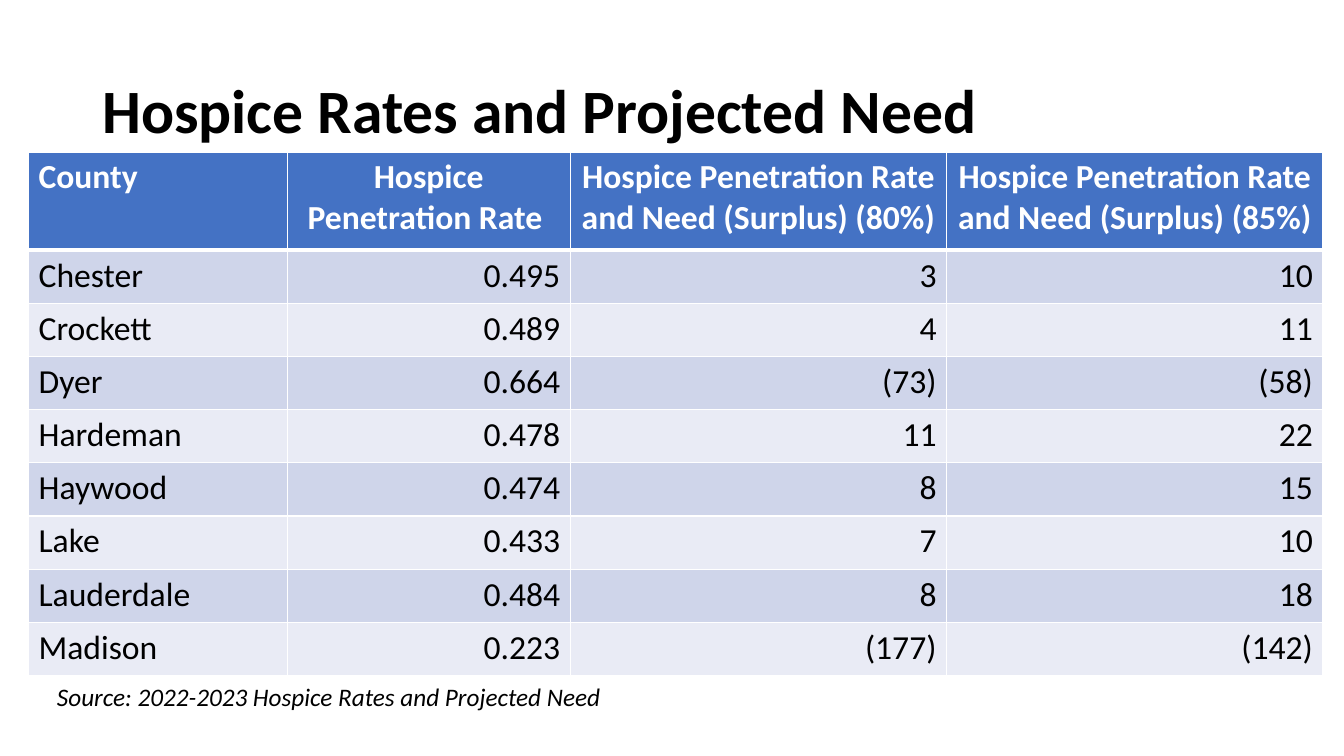
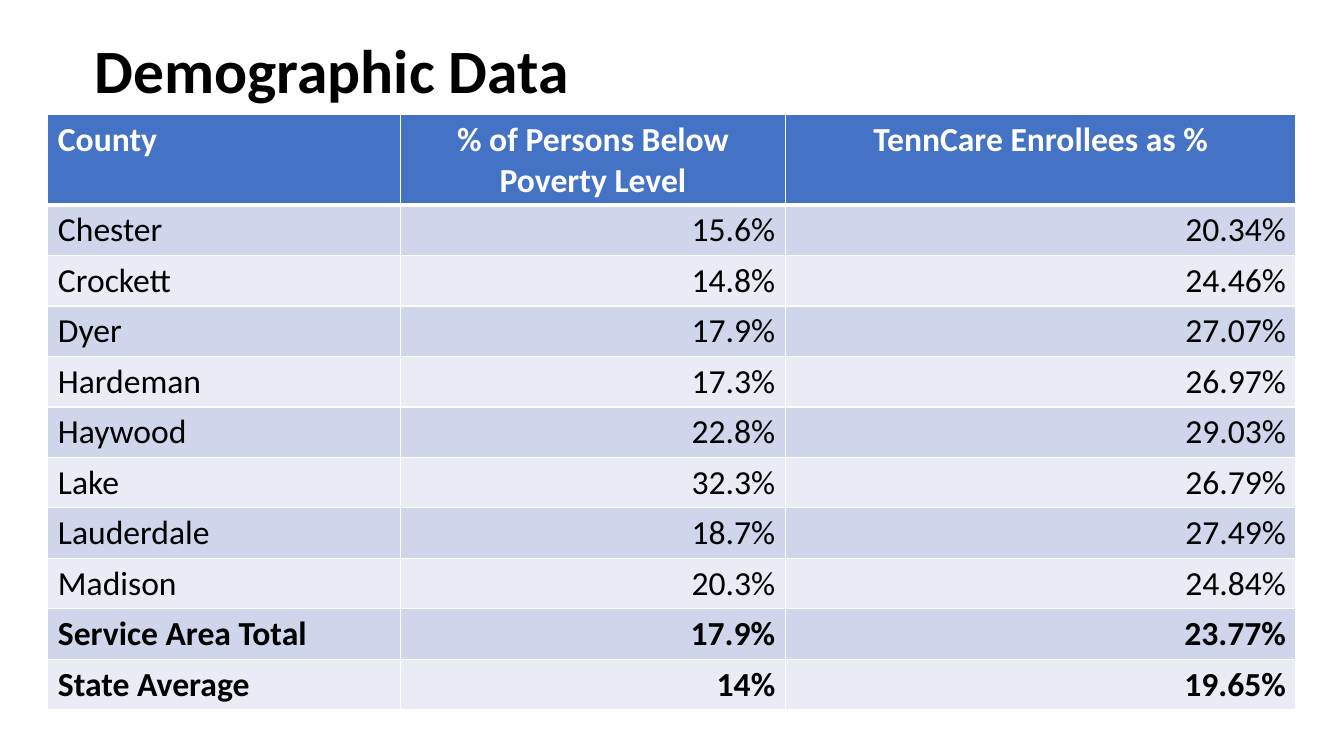
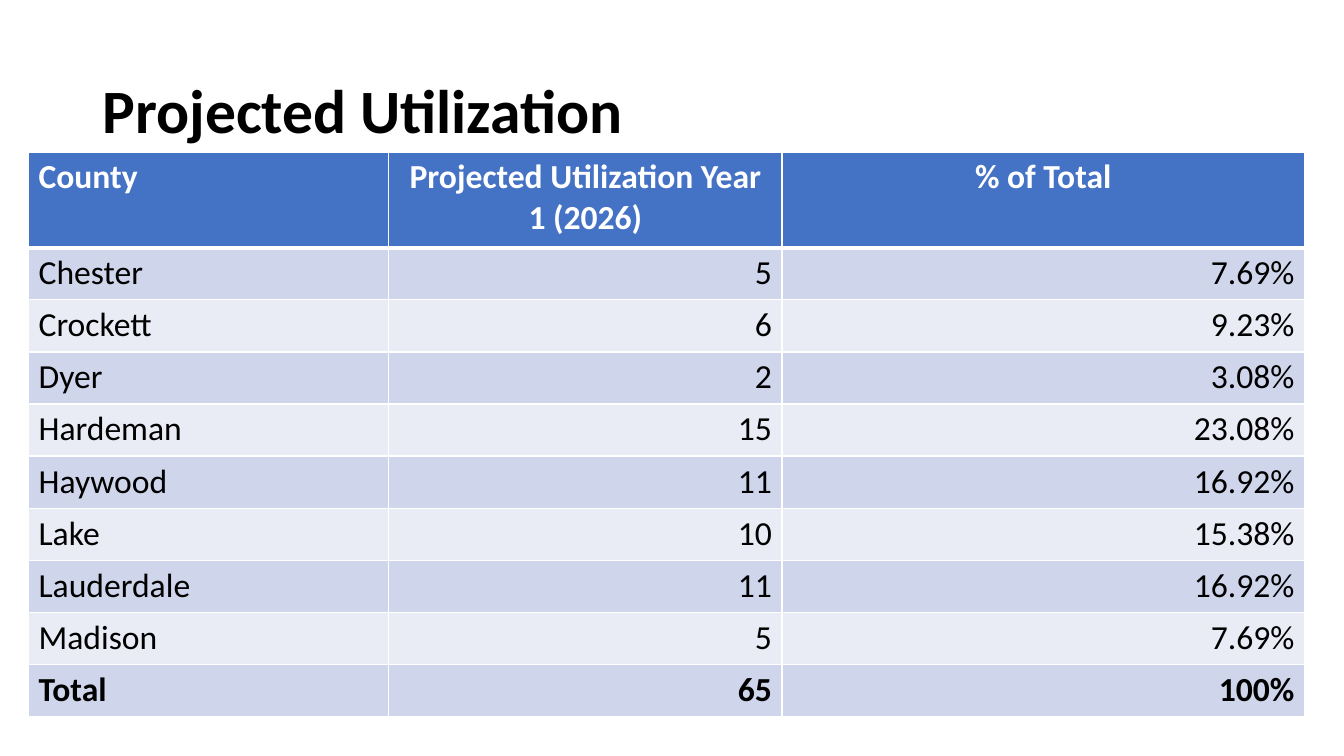
from dataclasses import dataclass

from lxml.etree import SubElement
from pptx import Presentation
from pptx.dml.color import RGBColor as Rgb
from pptx.enum.text import MSO_ANCHOR as Anchor, PP_ALIGN as Align
from pptx.oxml.ns import qn
from pptx.util import Emu, Inches, Pt


@dataclass(frozen=True)
class Theme:
    """Colours, type sizes and line widths of the deck."""
    font: str = "Calibri"
    ink: str = "000000"
    paper: str = "FFFFFF"
    header: str = "4472C4"
    bands: tuple = ("CFD5EA", "E9EBF5")
    title_size: int = 44
    table_size: int = 24
    source_size: int = 18
    rule: int = 1
    header_rule: int = 3


class Deck:
    """Presentation on a grid of 160 columns by 90 rows."""

    def __init__(self, theme):
        """Open an empty wide presentation."""
        self.theme = theme
        self.deck = Presentation()
        self.deck.slide_width, self.deck.slide_height = Inches(13.33), Inches(7.5)
        self.slide = None

    def cols(self, count):
        """Turn grid columns into a length."""
        return Emu(round(self.deck.slide_width * count / 160))

    def rows(self, count):
        """Turn grid rows into a length."""
        return Emu(round(self.deck.slide_height * count / 90))

    def box(self, left, top, width, height):
        """Turn a grid box into lengths."""
        return self.cols(left), self.rows(top), self.cols(width), self.rows(height)

    def set_text(self, frame, text, size, color, bold=False, italic=False, align=Align.LEFT):
        """Fill a text frame with one styled paragraph."""
        frame.text = text
        paragraph = frame.paragraphs[0]
        paragraph.alignment = align
        for run in paragraph.runs:
            font = run.font
            font.name, font.size = self.theme.font, Pt(size)
            font.bold, font.italic = bold, italic
            font.color.rgb = Rgb.from_string(color)

    def text_box(self, text, place, size, **style):
        """Add a wrapping text box and return its frame."""
        frame = self.slide.shapes.add_textbox(*self.box(*place)).text_frame
        frame.word_wrap = True
        self.set_text(frame, text, size, self.theme.ink, **style)
        return frame

    def start(self, title, left=11, top=4.8):
        """Add a slide with its title."""
        self.slide = self.deck.slides.add_slide(self.deck.slide_layouts[6])
        frame = self.text_box(title, (left, top, 138, 17.4), self.theme.title_size, bold=True)
        frame.vertical_anchor = Anchor.MIDDLE
        frame.paragraphs[0].line_spacing = 0.9

    def source(self, text):
        """Add the italic source line under a table."""
        self.text_box(text, (5.6, 80.5, 102.4, 4.8), self.theme.source_size, italic=True)

    def borders(self, cell, above, below):
        """Draw the four borders of a cell."""
        properties = cell._tc.get_or_add_tcPr()
        sides = (("L", self.theme.rule), ("R", self.theme.rule), ("T", above), ("B", below))
        for index, (side, width) in enumerate(sides):
            line = SubElement(properties, qn(f"a:ln{side}"), w=str(int(Pt(width))))
            fill = SubElement(line, qn("a:solidFill"))
            SubElement(fill, qn("a:srgbClr"), val=self.theme.paper)
            properties.insert(index, line)

    def table(self, left, top, widths, header_height, row_height, headers, records, totals=0):
        """Add a banded table whose last rows may be bold totals."""
        theme = self.theme
        lines = [headers, *records]
        place = self.box(left, top, sum(widths), header_height + row_height * len(records))
        table = self.slide.shapes.add_table(len(lines), len(headers), *place).table
        for column, width in zip(table.columns, widths):
            column.width = self.cols(width)
        for r, line in enumerate(lines):
            is_header = r == 0
            table.rows[r].height = self.rows(header_height if is_header else row_height)
            shade = theme.header if is_header else theme.bands[(r - 1) % 2]
            color = theme.paper if is_header else theme.ink
            bold = is_header or r >= len(lines) - totals
            figure_align = Align.CENTER if is_header else Align.RIGHT
            above = theme.header_rule if r == 1 else theme.rule
            below = theme.header_rule if is_header else theme.rule
            for c, text in enumerate(line):
                cell = table.cell(r, c)
                cell.fill.solid()
                cell.fill.fore_color.rgb = Rgb.from_string(shade)
                self.borders(cell, above, below)
                self.set_text(cell.text_frame, text, theme.table_size, color, bold=bold,
                              align=figure_align if c else Align.LEFT)

    def save(self):
        """Save the finished presentation."""
        self.deck.save("out.pptx")


COUNTIES = ("Chester", "Crockett", "Dyer", "Hardeman", "Haywood", "Lake",
            "Lauderdale", "Madison")


def main():
    """Build the three county slides."""
    deck = Deck(Theme())

    deck.start("Hospice Rates and Projected Need")
    rates = ("0.495", "0.489", "0.664", "0.478", "0.474", "0.433", "0.484", "0.223")
    need_80 = ("3", "4", "(73)", "11", "8", "7", "8", "(177)")
    need_85 = ("10", "11", "(58)", "22", "15", "10", "18", "(142)")
    need_headers = [f"Hospice Penetration Rate and Need (Surplus) ({share}%)"
                    for share in (80, 85)]
    deck.table(3.4, 18.1, (30.8, 33.7, 44.8, 44.8), 11.7, 6.33,
               ("County", "Hospice Penetration Rate ", *need_headers),
               list(zip(COUNTIES, rates, need_80, need_85)))
    deck.source("Source: 2022-2023 Hospice Rates and Projected Need")

    deck.start("Demographic Data", left=10.1, top=0)
    poverty = ("15.6%", "14.8%", "17.9%", "17.3%", "22.8%", "32.3%", "18.7%", "20.3%",
               "17.9%", "14%")
    enrollees = ("20.34%", "24.46%", "27.07%", "26.97%", "29.03%", "26.79%", "27.49%",
                 "24.84%", "23.77%", "19.65%")
    areas = (*COUNTIES, "Service Area Total", "State Average")
    deck.table(5.7, 13.6, (42, 45.8, 60.8), 10.8, 6.01,
               ("County", "% of Persons Below Poverty Level", "TennCare Enrollees as %"),
               list(zip(areas, poverty, enrollees)), totals=2)

    deck.start("Projected Utilization")
    patients = ("5", "6", "2", "15", "11", "10", "11", "5", "65")
    shares = ("7.69%", "9.23%", "3.08%", "23.08%", "16.92%", "15.38%", "16.92%", "7.69%",
              "100%")
    deck.table(3.4, 18.1, (42.9, 46.8, 62.2), 11.4, 6.2,
               ("County", "Projected Utilization Year 1 (2026)", "% of Total"),
               list(zip((*COUNTIES, "Total"), patients, shares)), totals=1)

    deck.save()


if __name__ == "__main__":
    main()
